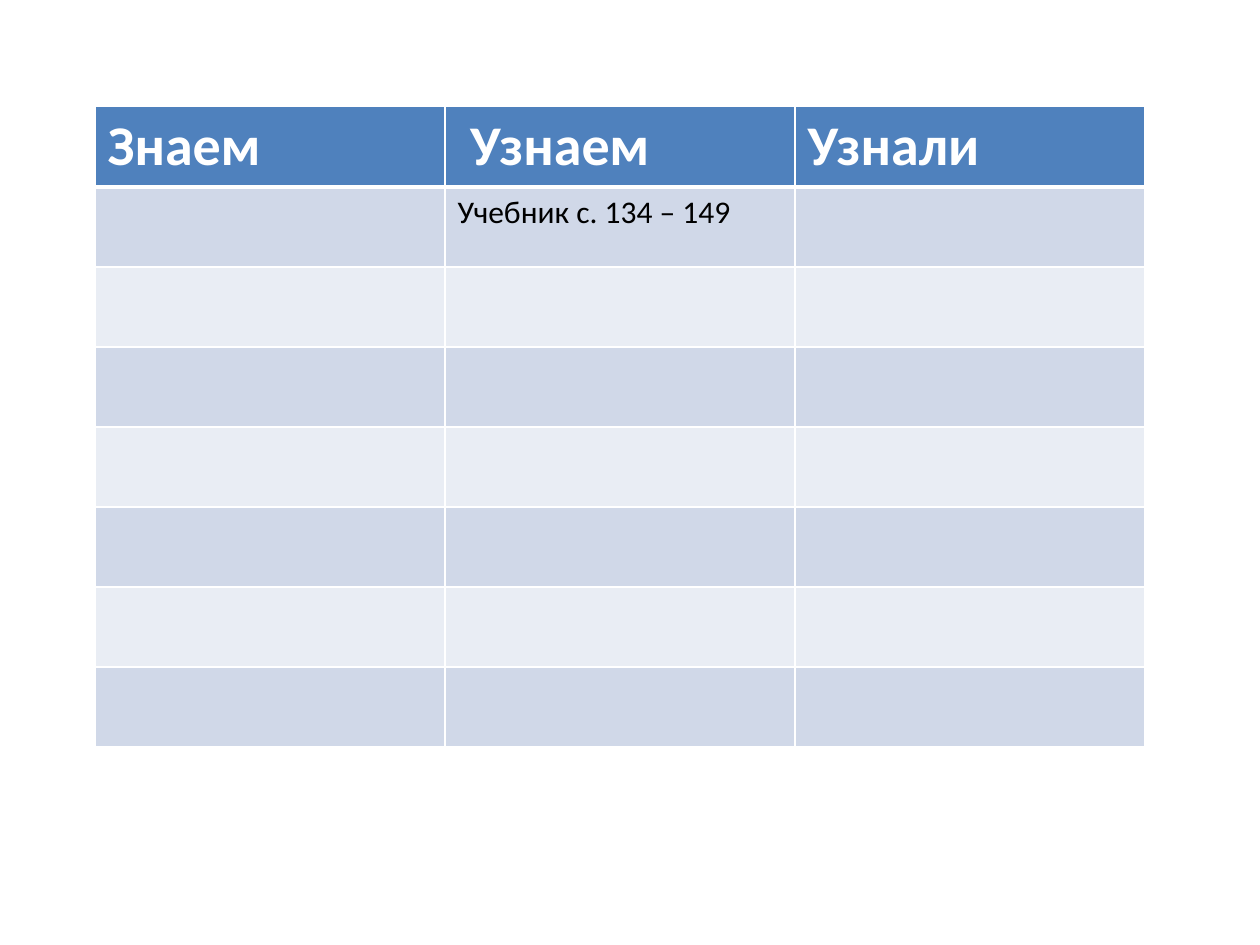
from lxml.etree import fromstring
from pptx import Presentation
from pptx.dml.color import RGBColor
from pptx.oxml.ns import nsdecls
from pptx.util import Inches, Pt

PX = Inches(1) / 126
WHITE = RGBColor(0xFF, 0xFF, 0xFF)
BLACK = RGBColor(0, 0, 0)
BLUE = RGBColor(0x4F, 0x81, 0xBD)
BANDS = RGBColor(0xE9, 0xED, 0xF4), RGBColor(0xD0, 0xD8, 0xE8)


def px(n):
    return round(n * PX)


class Deck:
    """Holds the style and the current slide."""

    font = "Calibri"

    def __init__(self):
        self.prs = Presentation()
        self.prs.slide_width, self.prs.slide_height = px(1260), px(945)
        self.s = self.prs.slides.add_slide(self.prs.slide_layouts[6])

    def borders(self, cell, **widths):
        tcPr = cell._tc.get_or_add_tcPr()
        for i, (side, width) in enumerate(widths.items()):
            tcPr.insert(i, fromstring(
                f'<a:ln{side} {nsdecls("a")} w="{Pt(width)}"><a:solidFill>'
                f'<a:srgbClr val="{WHITE}"/></a:solidFill></a:ln{side}>'))

    def text(self, cell, text, size, color, bold):
        cell.text_frame.text = text
        for r in cell.text_frame.paragraphs[0].runs:
            r.font.name, r.font.size = self.font, Pt(size)
            r.font.bold, r.font.color.rgb = bold, color

    def table(self, x, y, col_width, row_height, rows):
        n_rows, n_cols = len(rows), len(rows[0])
        table = self.s.shapes.add_table(
            n_rows, n_cols, px(x), px(y),
            px(col_width * n_cols), px(row_height * n_rows)).table
        for i, values in enumerate(rows):
            table.rows[i].height = px(row_height)
            header = i == 0
            for j, value in enumerate(values):
                cell = table.cell(i, j)
                cell.fill.solid()
                cell.fill.fore_color.rgb = BLUE if header else BANDS[i % 2]
                self.borders(cell, L=1, R=1, T=3 if i == 1 else 1, B=3 if header else 1)
                if value:
                    self.text(cell, value, 32 if header else 18,
                              WHITE if header else BLACK, header)


def main():
    deck = Deck()
    rows = [["Знаем", " Узнаем", "Узнали"], ["", "Учебник с. 134 – 149", ""]]
    rows += [[""] * 3 for _ in range(6)]
    deck.table(95, 106, 350, 80, rows)
    deck.prs.save("out.pptx")


if __name__ == "__main__":
    main()
